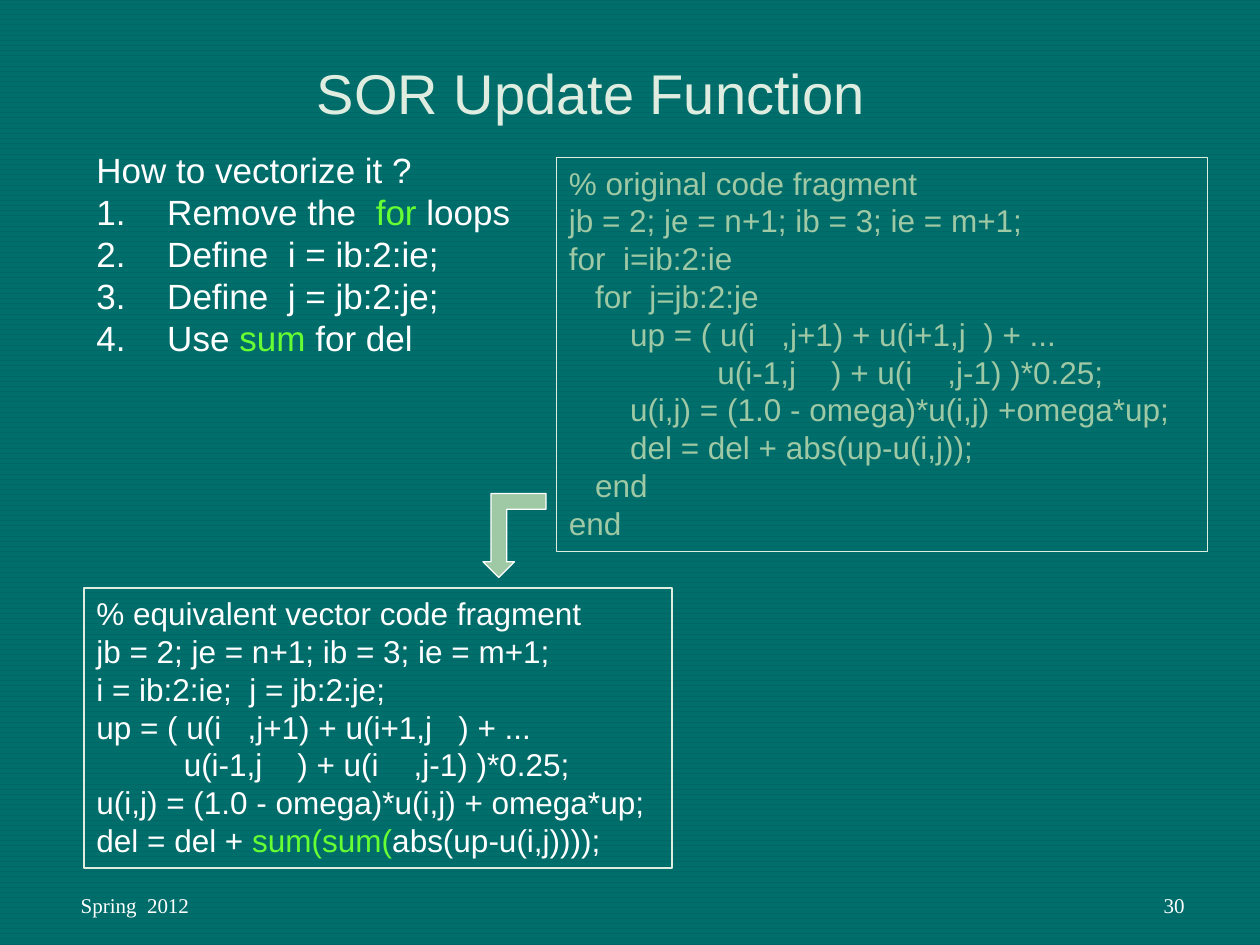
import lxml.etree
import pptx
import pptx.dml.color
import pptx.enum.dml
import pptx.enum.shapes
import pptx.enum.text
import pptx.oxml.ns
import pptx.util

Pt = pptx.util.Pt
Align = pptx.enum.text.PP_ALIGN
Anchor = pptx.enum.text.MSO_ANCHOR
Shape = pptx.enum.shapes.MSO_SHAPE

COLORS = {
    "stripe": "006E6B",
    "ground": "006666",
    "white": "FFFFFF",
    "pale": "DFEDE1",
    "sage": "9FC8A5",
    "lime": "66FF33",
}

STEPS = [
    ["Remove the  ", ("for", "lime"), " loops"],
    ["Define  i = ib:2:ie;"],
    ["Define  j = jb:2:je;"],
    ["Use ", ("sum", "lime"), " for del"],
]

VECTOR_CODE = [
    ["% equivalent vector code fragment"],
    ["jb = 2; je = n+1; ib = 3; ie = m+1;"],
    ["i = ib:2:ie;  j = jb:2:je;"],
    ["up = ( u(i   ,j+1) + u(i+1,j   ) + ..."],
    ["          u(i-1,j    ) + u(i    ,j-1) )*0.25;"],
    ["u(i,j) = (1.0 - omega)*u(i,j) + omega*up;"],
    ["del = del + ", ("sum(sum(", "lime"), "abs(up-u(i,j))));"],
]

LOOP_CODE = [
    ["% original code fragment"],
    ["jb = 2; je = n+1; ib = 3; ie = m+1;"],
    ["for  i=ib:2:ie"],
    ["   for  j=jb:2:je"],
    ["       up = ( u(i   ,j+1) + u(i+1,j  ) + ..."],
    ["                 u(i-1,j    ) + u(i    ,j-1) )*0.25;"],
    ["       u(i,j) = (1.0 - omega)*u(i,j) +omega*up;"],
    ["       del = del + abs(up-u(i,j));"],
    ["   end"],
    ["end"],
]


def rgb(color):
    return pptx.dml.color.RGBColor.from_string(COLORS[color])


def set_background(slide):
    fill = slide.background.fill
    fill.patterned()
    fill.pattern = pptx.enum.dml.MSO_PATTERN.DARK_HORIZONTAL
    fill.fore_color.rgb = rgb("stripe")
    fill.back_color.rgb = rgb("ground")


def number_paragraph(paragraph):
    properties = paragraph._p.get_or_add_pPr()
    properties.set("marL", str(Pt(40.5)))
    properties.set("indent", str(-Pt(40.5)))
    lxml.etree.SubElement(
        properties, pptx.oxml.ns.qn("a:buAutoNum"), type="arabicPeriod")


def write_lines(frame, lines, size, color, font="Arial", align=Align.LEFT,
                anchor=Anchor.TOP, numbered_from=None):
    frame.word_wrap = True
    frame.vertical_anchor = anchor
    for index, line in enumerate(lines):
        paragraph = frame.paragraphs[0] if index == 0 else frame.add_paragraph()
        paragraph.alignment = align
        if numbered_from is not None and index >= numbered_from:
            number_paragraph(paragraph)
        paragraph.font.name = font
        paragraph.font.size = Pt(size)
        paragraph.font.color.rgb = rgb(color)
        for part in line:
            text, accent = (part, None) if isinstance(part, str) else part
            run = paragraph.add_run()
            run.text = text
            if accent:
                run.font.color.rgb = rgb(accent)


def add_text(slide, box, lines, size, color, **options):
    text_box = slide.shapes.add_textbox(*map(Pt, box))
    write_lines(text_box.text_frame, lines, size, color, **options)


def add_shape(slide, kind, box, line_color):
    shape = slide.shapes.add_shape(kind, *map(Pt, box))
    shape.shadow.inherit = False
    shape.line.color.rgb = rgb(line_color)
    shape.line.width = Pt(0.75)
    return shape


def add_code(slide, box, lines, color):
    shape = add_shape(slide, Shape.RECTANGLE, box, "pale")
    shape.fill.background()
    write_lines(shape.text_frame, lines, 18, color)


def add_bent_arrow(slide, box):
    arrow = add_shape(slide, Shape.BENT_UP_ARROW, box, "white")
    arrow.rotation = 180
    arrow.fill.solid()
    arrow.fill.fore_color.rgb = rgb("sage")


def add_footer(slide, left, text, align):
    add_text(slide, (left, 492, 168, 36), [[text]], 12, "white",
             font="Times New Roman", align=align, anchor=Anchor.BOTTOM)


def main():
    presentation = pptx.Presentation()
    presentation.slide_width = Pt(720)
    presentation.slide_height = Pt(540)
    slide = presentation.slides.add_slide(presentation.slide_layouts[6])
    set_background(slide)

    add_footer(slide, 39, "Spring  2012", Align.LEFT)
    add_footer(slide, 516, "30", Align.RIGHT)
    add_text(slide, (174, 30, 372, 46), [["SOR Update Function"]], 32, "pale")
    add_text(slide, (48, 81.5, 252, 128), [["How to vectorize it ?"]] + STEPS,
             20, "white", numbered_from=1)
    add_code(slide, (48, 336, 336, 160), VECTOR_CODE, "white")
    add_code(slide, (318, 90, 372, 225), LOOP_CODE, "sage")
    add_bent_arrow(slide, (276, 282, 36, 48))

    presentation.save("out.pptx")


if __name__ == "__main__":
    main()
